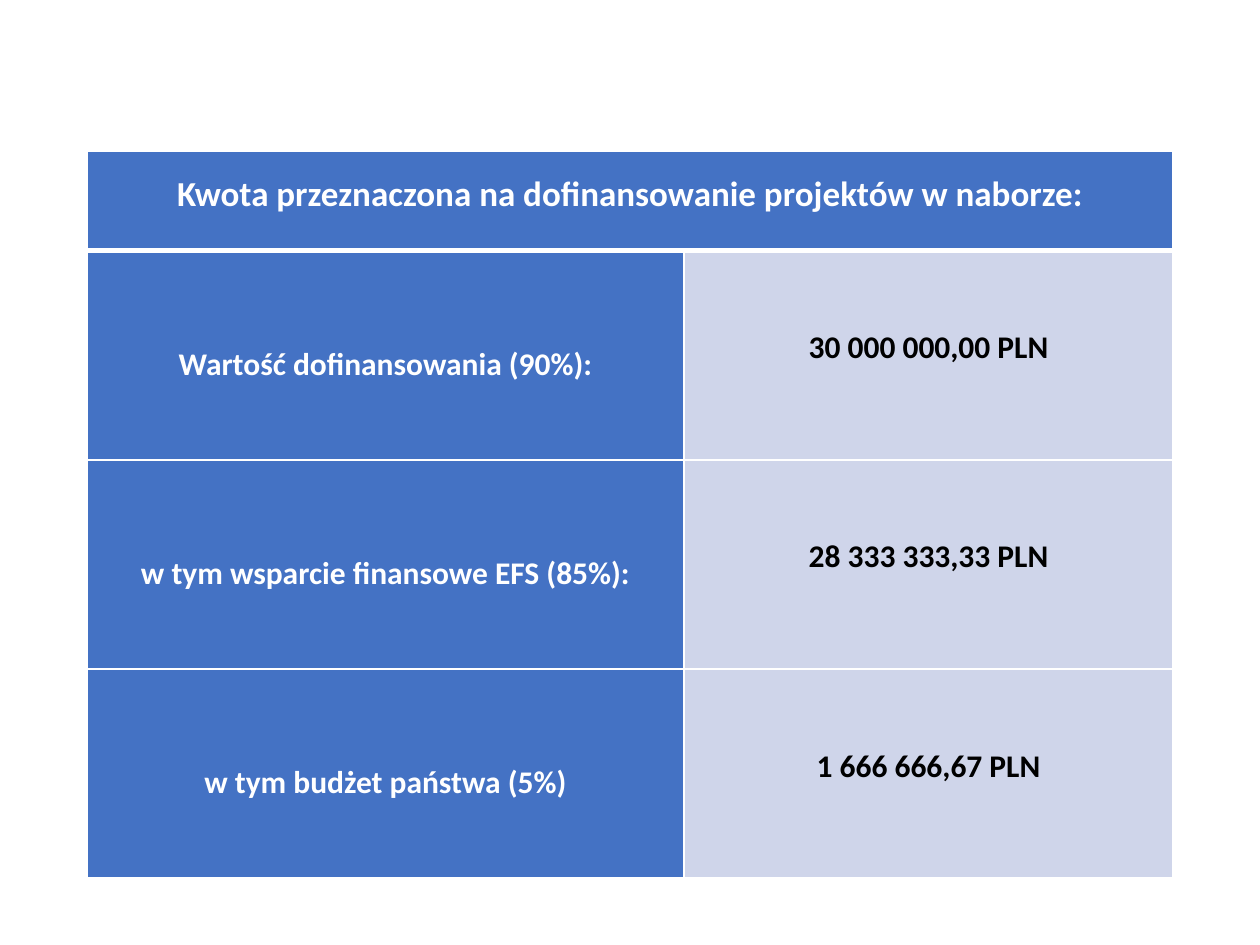
import pptx
import pptx.dml.color
import pptx.enum.text
import pptx.oxml
import pptx.util
from dataclasses import dataclass
from lxml import etree
from pptx.util import Inches

RGB = pptx.dml.color.RGBColor.from_string
ANCHOR = pptx.enum.text.MSO_ANCHOR


@dataclass(frozen=True)
class Theme:
    font: str = "Calibri"
    blue: str = "4472C4"
    pale: str = "CFD5EA"
    white: str = "FFFFFF"
    black: str = "000000"
    heading_size: int = 20
    body_size: int = 18
    thin: int = 1
    thick: int = 3


THEME = Theme()
HEADING = "Kwota przeznaczona na dofinansowanie projektów w naborze:"
# Amounts use non-breaking spaces between digit groups
FUNDING = [
    ("Wartość dofinansowania (90%):", "30 000 000,00 PLN"),
    ("w tym wsparcie finansowe EFS (85%):", "28 333 333,33 PLN"),
    ("w tym budżet państwa (5%)", "1 666 666,67 PLN"),
]
COLUMN_WIDTHS = (4.74, 3.88)
HEADING_HEIGHT, ROW_HEIGHT = 0.79, 1.66


def style_cell(cell, fill, top=THEME.thin, bottom=THEME.thin):
    """Set white borders, then the fill, which must follow them in the XML."""
    properties = cell._tc.get_or_add_tcPr()
    widths = {"L": THEME.thin, "R": THEME.thin, "T": top, "B": bottom}
    for side, width in widths.items():
        border = etree.SubElement(properties, pptx.oxml.ns.qn(f"a:ln{side}"),
                                  w=str(pptx.util.Pt(width)))
        solid = etree.SubElement(border, pptx.oxml.ns.qn("a:solidFill"))
        etree.SubElement(solid, pptx.oxml.ns.qn("a:srgbClr"), val=THEME.white)
    cell.fill.solid()
    cell.fill.fore_color.rgb = RGB(fill)


def write_cell(cell, text, size, color, anchor=ANCHOR.TOP, top_inset=0,
               line_spacing=1.5):
    cell.margin_left = cell.margin_right = Inches(0.07)
    cell.margin_top, cell.margin_bottom = Inches(top_inset), 0
    cell.vertical_anchor = anchor
    cell.text = text
    paragraph = cell.text_frame.paragraphs[0]
    paragraph.alignment = pptx.enum.text.PP_ALIGN.CENTER
    paragraph.line_spacing = line_spacing
    paragraph.font.name = THEME.font
    paragraph.font.size = pptx.util.Pt(size)
    paragraph.font.bold = True
    paragraph.font.color.rgb = RGB(color)


def add_funding_table(slide):
    height = HEADING_HEIGHT + ROW_HEIGHT * len(FUNDING)
    funding = slide.shapes.add_table(
        len(FUNDING) + 1, len(COLUMN_WIDTHS), Inches(0.69), Inches(1.2),
        Inches(sum(COLUMN_WIDTHS)), Inches(height)).table
    for column, width in zip(funding.columns, COLUMN_WIDTHS):
        column.width = Inches(width)
    for index, row in enumerate(funding.rows):
        row.height = Inches(ROW_HEIGHT if index else HEADING_HEIGHT)

    # Heading across both columns
    heading = funding.cell(0, 0)
    heading.merge(funding.cell(0, 1))
    for cell in funding.rows[0].cells:
        style_cell(cell, THEME.blue, bottom=THEME.thick)
    write_cell(heading, HEADING, THEME.heading_size, THEME.white)

    # Funding sources and their amounts
    for index, (source, amount) in enumerate(FUNDING, start=1):
        source_cell, amount_cell = funding.rows[index].cells
        top = THEME.thick if index == 1 else THEME.thin
        style_cell(source_cell, THEME.blue, top=top)
        style_cell(amount_cell, THEME.pale, top=top)
        write_cell(source_cell, source, THEME.body_size, THEME.white,
                   anchor=ANCHOR.MIDDLE)
        write_cell(amount_cell, amount, THEME.body_size, THEME.black,
                   top_inset=0.62, line_spacing=1.0)


def main():
    presentation = pptx.Presentation()
    presentation.slide_width = Inches(10)
    presentation.slide_height = Inches(7.5)
    slide = presentation.slides.add_slide(presentation.slide_layouts[6])
    add_funding_table(slide)
    presentation.save("out.pptx")


if __name__ == "__main__":
    main()
